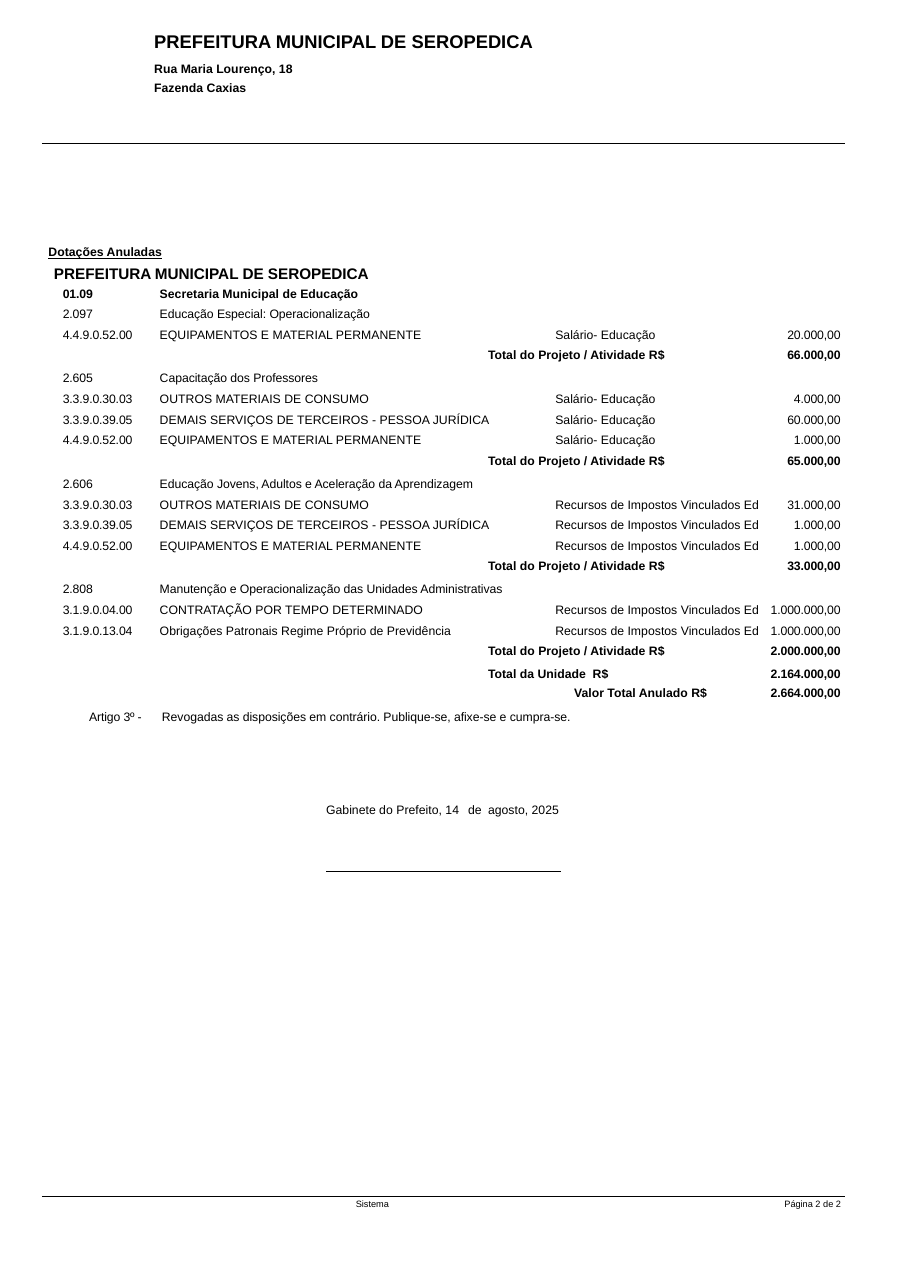
from pptx import Presentation
from pptx.dml.color import RGBColor
from pptx.enum.shapes import MSO_CONNECTOR
from pptx.enum.text import MSO_ANCHOR, MSO_AUTO_SIZE, PP_ALIGN
from pptx.oxml.ns import qn
from pptx.util import Inches, Pt
from lxml import etree

BLACK = RGBColor(0, 0, 0)
LEFT, RIGHT = PP_ALIGN.LEFT, PP_ALIGN.RIGHT
TOP, NO_AUTOFIT = MSO_ANCHOR.TOP, MSO_AUTO_SIZE.NONE
STRAIGHT = MSO_CONNECTOR.STRAIGHT

CITY = "PREFEITURA MUNICIPAL DE SEROPEDICA"
SALARY = "Salário- Educação"
TAXES = "Recursos de Impostos Vinculados Ed"
EQUIPMENT = "EQUIPAMENTOS E MATERIAL PERMANENTE"
CONSUMABLES = "OUTROS MATERIAIS DE CONSUMO"
SERVICES = "DEMAIS SERVIÇOS DE TERCEIROS - PESSOA JURÍDICA"

PROJECTS = [
    ("2.097", "Educação Especial: Operacionalização", SALARY, "66.000,00", [
        ("4.4.9.0.52.00", EQUIPMENT, "20.000,00")]),
    ("2.605", "Capacitação dos Professores", SALARY, "65.000,00", [
        ("3.3.9.0.30.03", CONSUMABLES, "4.000,00"),
        ("3.3.9.0.39.05", SERVICES, "60.000,00"),
        ("4.4.9.0.52.00", EQUIPMENT, "1.000,00")]),
    ("2.606", "Educação Jovens, Adultos e Aceleração da Aprendizagem", TAXES, "33.000,00", [
        ("3.3.9.0.30.03", CONSUMABLES, "31.000,00"),
        ("3.3.9.0.39.05", SERVICES, "1.000,00"),
        ("4.4.9.0.52.00", EQUIPMENT, "1.000,00")]),
    ("2.808", "Manutenção e Operacionalização das Unidades Administrativas", TAXES,
     "2.000.000,00", [
         ("3.1.9.0.04.00", "CONTRATAÇÃO POR TEMPO DETERMINADO", "1.000.000,00"),
         ("3.1.9.0.13.04", "Obrigações Patronais Regime Próprio de Previdência",
          "1.000.000,00")]),
]

COLUMN_WIDTHS = (0.83, 5.6, 0.69)
# kind: row height in points, top inset, code inset, description inset, bold, tab stops, tracking
ROW_KINDS = {
    "unit": (10.9, 0, 0.03, 0.08, True, (), 0),
    "project": (14.25, 0.03, 0.03, 0.08, False, (), -0.05),
    "item": (13.5, 0.02, 0.03, 0.08, False, (3.59,), 0),
    "total": (14.25, 0.02, 0.03, 3.06, True, (), 0),
    "unit total": (12.9, 0.03, 0.03, 3.06, True, (0.95,), 0),
    "grand total": (14.25, 0.02, 0.03, 0, True, (), 0),
    "article": (12.5, 0.04, 0.27, 0.1, False, (), -0.05),
}

LABELS = [
    (1.4, 0.56, 3, 0.35, "Rua Maria Lourenço, 18\nFazenda Caxias", dict(bold=True, gap=2.5)),
    (0.44, 2.22, 2.5, 0.15, "Dotações Anuladas", dict(bold=True, underline=True)),
    (0.49, 2.4, 3.5, 0.18, CITY, dict(size=10, bold=True)),
    (2.96, 7.28, 2.3, 0.15, "Gabinete do Prefeito, 14\tde\tagosto, 2025", dict(tabs=(1.29, 1.47))),
    (3.23, 10.88, 0.6, 0.12, "Sistema", dict(size=6)),
    (7.12, 10.88, 0.6, 0.12, "Página 2 de 2", dict(size=6)),
]
RULES = [(0.38, 7.67, 1.3), (2.96, 5.09, 7.91), (0.38, 7.67, 10.86)]


def write(frame, text, size=8, bold=False, underline=False, align=LEFT, tabs=(), gap=0,
          tracking=0):
    """Fill a text frame with one formatted paragraph per line of text."""
    frame.word_wrap = True
    for index, line in enumerate(text.split("\n")):
        paragraph = frame.add_paragraph() if index else frame.paragraphs[0]
        if tabs:
            stops = etree.SubElement(paragraph._p.get_or_add_pPr(), qn("a:tabLst"))
            for stop in tabs:
                etree.SubElement(stops, qn("a:tab"), pos=str(Inches(stop)), algn="l")
        paragraph.alignment = align
        if index:
            paragraph.space_before = Pt(gap)
        if not line:
            paragraph._p.get_or_add_endParaRPr().set("sz", str(size * 100))
            continue
        run = paragraph.add_run()
        run.text = line
        run.font.name = "Arial"
        run.font.size = Pt(size)
        run.font.bold = bold
        run.font.underline = underline
        run.font.color.rgb = BLACK
        if tracking:
            run._r.get_or_add_rPr().set("spc", str(round(tracking * 100)))


def set_margins(holder, left=0, top=0, right=0):
    """Set the insets of a cell or text frame in inches."""
    holder.margin_left, holder.margin_top = Inches(left), Inches(top)
    holder.margin_right, holder.margin_bottom = Inches(right), 0


def budget_rows():
    """List the table rows as kind, code, description and value."""
    rows = [("unit", "01.09", "Secretaria Municipal de Educação", "")]
    for code, project, source, total, items in PROJECTS:
        rows.append(("project", code, project, ""))
        rows += [("item", item, f"{name}\t{source}", value) for item, name, value in items]
        rows.append(("total", "", "Total do Projeto / Atividade R$", total))
    return rows + [
        ("unit total", "", "Total da Unidade\tR$", "2.164.000,00"),
        ("grand total", "", "Valor Total Anulado R$", "2.664.000,00"),
        ("article", "Artigo 3º -",
         "Revogadas as disposições em contrário. Publique-se, afixe-se e cumpra-se.", ""),
    ]


def add_budget(slide):
    """Draw the table of annulled appropriations."""
    rows = budget_rows()
    height = sum(ROW_KINDS[row[0]][0] for row in rows)
    budget = slide.shapes.add_table(len(rows), len(COLUMN_WIDTHS), Inches(0.54), Inches(2.61),
                                    Inches(sum(COLUMN_WIDTHS)), Pt(height)).table
    budget.first_row = budget.horz_banding = False
    for column, width in zip(budget.columns, COLUMN_WIDTHS):
        column.width = Inches(width)
    for row, (kind, *texts) in zip(budget.rows, rows):
        row_height, top, code_inset, name_inset, bold, tabs, name_tracking = ROW_KINDS[kind]
        row.height = Pt(row_height)
        grand = kind == "grand total"
        layouts = ((code_inset, 0, LEFT, (), -0.1),
                   (name_inset, 0.55 if grand else 0, RIGHT if grand else LEFT, tabs,
                    name_tracking),
                   (0, 0.03, RIGHT, (), -0.1))
        for cell, text, (left, right, align, stops, tracking) in zip(row.cells, texts, layouts):
            cell.fill.background()
            set_margins(cell, left, top, right)
            write(cell.text_frame, text, bold=bold, align=align, tabs=stops, tracking=tracking)


def main():
    """Build the decree page and save it."""
    deck = Presentation()
    deck.slide_width, deck.slide_height = Inches(8.26), Inches(11.69)
    slide = deck.slides.add_slide(deck.slide_layouts[5])

    title = slide.shapes.title
    title.left, title.top, title.width, title.height = map(Inches, (1.4, 0.27, 4.5, 0.22))
    set_margins(title.text_frame)
    title.text_frame.vertical_anchor = TOP
    title.text_frame.auto_size = NO_AUTOFIT
    write(title.text_frame, CITY, size=12, bold=True)

    for left, top, width, height, text, style in LABELS:
        label = slide.shapes.add_textbox(*map(Inches, (left, top, width, height)))
        set_margins(label.text_frame)
        write(label.text_frame, text, **style)

    add_budget(slide)

    for start, end, y in RULES:
        rule = slide.shapes.add_connector(STRAIGHT, *map(Inches, (start, y, end, y)))
        rule.line.color.rgb = BLACK
        rule.line.width = Pt(0.75)
        etree.SubElement(rule._element.spPr, qn("a:effectLst"))

    deck.save("out.pptx")


if __name__ == "__main__":
    main()
